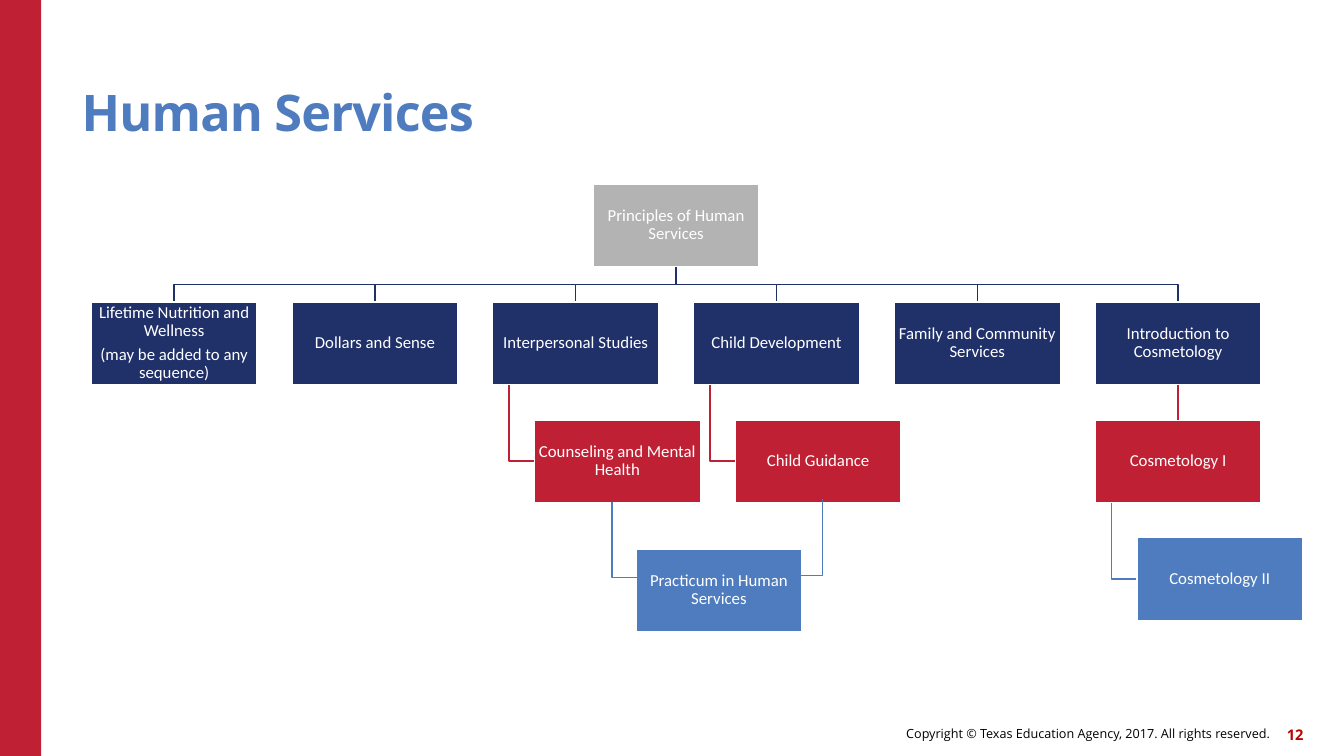
from dataclasses import dataclass
from pptx import Presentation, util as u
from pptx.dml.color import RGBColor
from pptx.enum import shapes, text
from pptx.oxml.ns import qn
from lxml import etree

NAVY, RED, BLUE, GRAY, WHITE = "203069", "C02033", "4E7CBE", "B3B3B3", "FFFFFF"
WIDE, HIGH = 4.18, 2.08
LEFT, TOP = 2.3, 4.64
STEP_X, STEP_Y = 5.06, 2.97
INDENT, DROP = 1.05, 0.41
GAP = STEP_Y - HIGH


@dataclass
class Course:
    lines: tuple[str, ...]
    x: float
    y: float
    fill: str

    @property
    def mid(self) -> float:
        return self.x + WIDE / 2

    @property
    def base(self) -> float:
        return self.y + HIGH


@dataclass
class Label:
    words: str
    x: float
    y: float
    w: float
    h: float
    size: float
    ink: str
    bold: bool = False
    align: text.PP_ALIGN = text.PP_ALIGN.RIGHT
    anchor: text.MSO_ANCHOR = text.MSO_ANCHOR.MIDDLE
    pitch: float = 1.0
    track: int = 0


def col(n: int) -> float:
    return LEFT + n * STEP_X


def row(n: int) -> float:
    return TOP + n * STEP_Y


def paint(form, hue: str) -> None:
    """Give a fill or a font a solid colour."""
    if hasattr(form, "solid"):
        form.solid()
        form.fore_color.rgb = RGBColor.from_string(hue)
    else:
        form.color.rgb = RGBColor.from_string(hue)


def place(x: float, y: float, w: float, h: float) -> list[u.Length]:
    return [u.Cm(n) for n in (x, y, w, h)]


def set_frame(frame, inset: float, anchor) -> None:
    frame.word_wrap = True
    frame.vertical_anchor = anchor
    frame.margin_left = frame.margin_right = u.Cm(inset)
    frame.margin_top = frame.margin_bottom = u.Cm(inset)


def add_run(para, words: str, face: str, size: float, ink: str, bold: bool = False):
    run = para.add_run()
    run.text = words
    run.font.name, run.font.size, run.font.bold = face, u.Pt(size), bold
    paint(run.font, ink)
    return run


def add_label(slide, label: Label) -> None:
    box = slide.shapes.add_textbox(*place(label.x, label.y, label.w, label.h))
    set_frame(box.text_frame, 0, label.anchor)
    para = box.text_frame.paragraphs[0]
    para.alignment, para.line_spacing = label.align, label.pitch
    run = add_run(para, label.words, "Open Sans", label.size, label.ink, label.bold)
    if label.track:
        run.font._element.set("spc", str(label.track))


def add_block(slide, x: float, y: float, w: float, h: float, fill: str):
    block = slide.shapes.add_shape(shapes.MSO_SHAPE.RECTANGLE, *place(x, y, w, h))
    block.shadow.inherit = False
    paint(block.fill, fill)
    block.line.fill.background()
    return block


def add_course(slide, course: Course):
    block = add_block(slide, course.x, course.y, WIDE, HIGH, course.fill)
    paint(block.line.fill, WHITE)
    block.line.width = u.Pt(1)
    frame = block.text_frame
    set_frame(frame, 0.03, text.MSO_ANCHOR.MIDDLE)
    for n, line in enumerate(course.lines):
        para = frame.add_paragraph() if n else frame.paragraphs[0]
        para.alignment = text.PP_ALIGN.CENTER
        para.line_spacing, para.space_after = 0.9, u.Pt(4.2)
        add_run(para, line, "Calibri", 12, WHITE)
    return block


def add_path(slide, hue: str, *points: tuple[float, float]) -> None:
    """Draw an open bent line through the points."""
    spots = [(u.Cm(x), u.Cm(y)) for x, y in points]
    maker = slide.shapes.build_freeform(*spots[0])
    maker.add_line_segments(spots[1:], close=False)
    path = maker.convert_to_shape()
    path.shadow.inherit = False
    path.fill.background()
    paint(path.line.fill, hue)
    path.line.width = u.Pt(1)


def add_fork(slide, top: Course, low: Course) -> None:
    """Link a course to one in the row below, by way of the shared bar."""
    bar = top.base + GAP / 2
    add_path(slide, low.fill, (top.mid, top.base), (top.mid, bar),
             (low.mid, bar), (low.mid, low.y))


def add_hook(slide, top: Course, low: Course) -> None:
    """Link a course to the left side of an indented one."""
    x, y = top.x + DROP, low.y + HIGH / 2
    add_path(slide, low.fill, (x, top.base), (x, y), (low.x, y))


def add_link(slide, top, low, hue: str) -> None:
    """Join bottom to top with a straight line."""
    link = slide.shapes.add_connector(shapes.MSO_CONNECTOR.STRAIGHT, 0, 0, 0, 0)
    link.begin_connect(top, 2)
    link.end_connect(low, 0)
    paint(link.line.fill, hue)
    link.line.width = u.Pt(1)
    etree.SubElement(link._element.spPr, qn("a:effectLst"))


LABELS = [
    Label("Copyright © Texas Education Agency, 2017. All rights reserved.",
          15.6, 18.08, 16.4, 0.81, 9, "000000"),
    Label("12", 31.78, 18.11, 1.07, 0.81, 10.5, "C00000", True),
    Label("Human Services", 2.06, 1.14, 27.94, 2.44, 36, BLUE, True,
          text.PP_ALIGN.LEFT, text.MSO_ANCHOR.BOTTOM, 0.9, -60),
]

ROOT = Course(("Principles of Human Services",), col(2.5), row(0), GRAY)
FIRST = [Course(lines, col(n), row(1), NAVY) for n, lines in enumerate([
    ("Lifetime Nutrition and Wellness", "(may be added to any sequence)"),
    ("Dollars and Sense",),
    ("Interpersonal Studies",),
    ("Child Development",),
    ("Family and Community Services",),
    ("Introduction to Cosmetology",),
])]
MENTAL = Course(("Counseling and Mental Health",), col(2) + INDENT, row(2), RED)
GUIDE = Course(("Child Guidance",), col(3) + INDENT, row(2), RED)
COSMO = Course(("Cosmetology I",), col(5), row(2), RED)
COSMO_TWO = Course(("Cosmetology II",), col(5) + INDENT, row(3), BLUE)
FINAL = Course(("Practicum in Human Services",), 16.03, 13.84, BLUE)


def main() -> None:
    deck = Presentation()
    deck.slide_width, deck.slide_height = u.Cm(33.87), u.Cm(19.05)
    slide = deck.slides.add_slide(deck.slide_layouts[6])
    add_block(slide, 0, 0, 1.04, 19.05, RED)
    for label in LABELS:
        add_label(slide, label)

    for low in FIRST:
        add_fork(slide, ROOT, low)
    for top, low in [(FIRST[2], MENTAL), (FIRST[3], GUIDE), (COSMO, COSMO_TWO)]:
        add_hook(slide, top, low)

    for course in [ROOT, *FIRST[:-1], MENTAL, GUIDE, COSMO_TWO, FINAL]:
        add_course(slide, course)
    intro, cosmo = [add_course(slide, course) for course in (FIRST[-1], COSMO)]
    add_link(slide, intro, cosmo, RED)

    add_path(slide, BLUE, (15.42, 12.65), (15.42, 14.55), (16.05, 14.55))
    add_path(slide, BLUE, (20.73, 12.57), (20.73, 14.5), (20.09, 14.5))
    deck.save("out.pptx")


if __name__ == "__main__":
    main()
